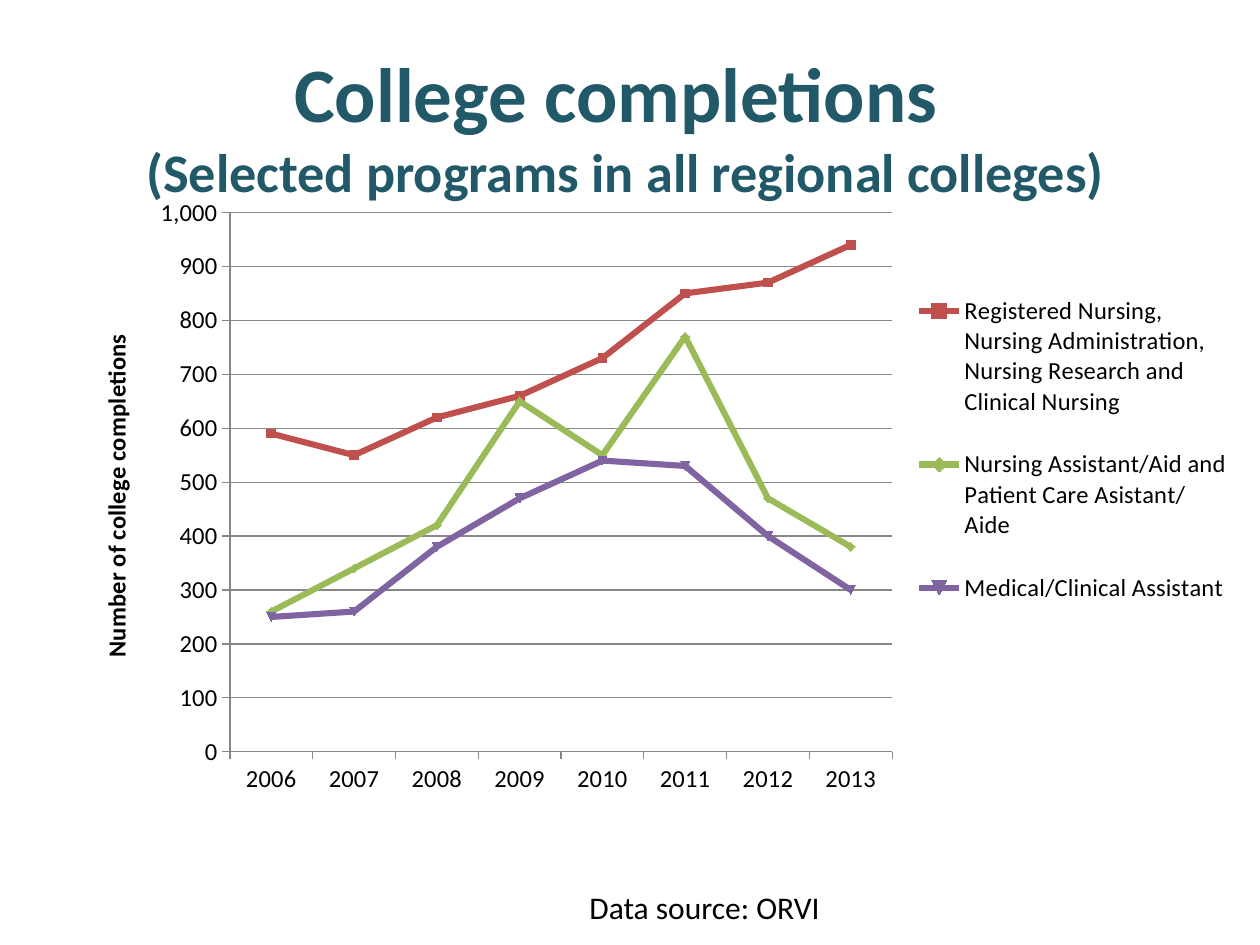
from dataclasses import dataclass

from lxml.etree import SubElement
from pptx import Presentation
from pptx.chart.data import CategoryChartData
from pptx.dml.color import RGBColor
from pptx.enum.chart import XL_CHART_TYPE as ChartType, XL_LEGEND_POSITION as LegendPosition
from pptx.enum.chart import XL_TICK_MARK as TickMark
from pptx.enum.text import MSO_ANCHOR as Anchor, PP_ALIGN as Align
from pptx.oxml.ns import qn
from pptx.util import Inches, Pt

FONT = "Calibri"
COLORS = {
    "title": "215968",
    "text": "000000",
    "grid": "878787",
    "nursing": "C0504D",
    "aide": "9BBB59",
    "medical": "8064A2",
}


@dataclass
class Program:
    name: str
    color: str
    completions: tuple[int, ...]


YEARS = [str(year) for year in range(2006, 2014)]
PROGRAMS = [
    Program("Registered Nursing, Nursing Administration, Nursing Research and Clinical Nursing",
            "nursing", (590, 550, 620, 660, 730, 850, 870, 940)),
    Program("Nursing Assistant/Aid and Patient Care Asistant/Aide",
            "aide", (260, 340, 420, 650, 550, 770, 470, 380)),
    Program("Medical/Clinical Assistant",
            "medical", (250, 260, 380, 470, 540, 530, 400, 300)),
]


def rgb(name: str) -> RGBColor:
    return RGBColor.from_string(COLORS[name])


def style_font(font, size: float, color: str = "text", bold: bool = False) -> None:
    font.name, font.size, font.bold = FONT, Pt(size), bold
    font.color.rgb = rgb(color)


def style_line(line, color: str, width: float) -> None:
    line.color.rgb = rgb(color)
    line.width = Pt(width)


def add_text_frame(slide, left: float, top: float, width: float, height: float):
    frame = slide.shapes.add_textbox(*map(Inches, (left, top, width, height))).text_frame
    frame.word_wrap = True
    return frame


def add_title(slide) -> None:
    frame = add_text_frame(slide, 0.46, 0.14, 9, 1.7)
    frame.vertical_anchor = Anchor.MIDDLE
    heading = frame.paragraphs[0]
    heading.alignment = Align.CENTER
    main = heading.add_run()
    main.text = "College completions "
    heading.add_line_break()
    subtitle = heading.add_run()
    subtitle.text = "(Selected programs in all regional colleges)"
    for run, size in ((main, 44), (subtitle, 31)):
        style_font(run.font, size, "title", True)


def add_data_source(slide) -> None:
    source = add_text_frame(slide, 4.58, 7, 4.64, 0.4).paragraphs[0]
    source.text = "Data source: ORVI"
    style_font(source.font, 18)


def set_layout(element, x: float, y: float, w: float, h: float, inner: bool = False) -> None:
    layout = element.find(qn("c:layout"))
    if layout is None:
        layout = SubElement(element, qn("c:layout"))
        element.remove(layout)
        element.insert(1 if element.tag == qn("c:legend") else 0, layout)
    manual = SubElement(layout, qn("c:manualLayout"))
    settings = [("layoutTarget", "inner")] if inner else []
    settings += [("xMode", "edge"), ("yMode", "edge"), ("x", x), ("y", y), ("w", w), ("h", h)]
    for tag, value in settings:
        SubElement(manual, qn(f"c:{tag}")).set("val", str(value))


def add_completions_chart(slide) -> None:
    data = CategoryChartData()
    data.categories = YEARS
    for program in PROGRAMS:
        data.add_series(program.name, program.completions)
    chart = slide.shapes.add_chart(
        ChartType.LINE_MARKERS, *map(Inches, (0.75, 1.5, 9.11, 4.92)), data).chart
    chart.has_title = False
    style_font(chart.font, 10)
    plot = chart.plots[0]
    plot.vary_by_categories = False
    for series, program in zip(plot.series, PROGRAMS):
        series.smooth = False
        style_line(series.format.line, program.color, 3.5)
        series.marker.size = 5
        series.marker.format.fill.solid()
        series.marker.format.fill.fore_color.rgb = rgb(program.color)

    for axis in (chart.category_axis, chart.value_axis):
        axis.major_tick_mark = TickMark.OUTSIDE
        axis.minor_tick_mark = TickMark.NONE
        style_line(axis.format.line, "grid", 0.75)
        style_font(axis.tick_labels.font, 14)
    counts = chart.value_axis
    counts.minimum_scale, counts.maximum_scale, counts.major_unit = 0, 1000, 100
    counts.tick_labels.number_format = r"#,##0;[Red]\ \(#,##0\)"
    counts.tick_labels.number_format_is_linked = False
    style_line(counts.major_gridlines.format.line, "grid", 0.75)
    axis_title = counts.axis_title.text_frame.paragraphs[0]
    axis_title.text = "Number of college completions"
    style_font(axis_title.font, 14, bold=True)

    chart.has_legend = True
    legend = chart.legend
    legend.position = LegendPosition.RIGHT
    legend.include_in_layout = False
    style_font(legend.font, 14)
    plot_area = chart.element.find(".//" + qn("c:plotArea"))
    set_layout(plot_area, 0.118, 0.038, 0.577, 0.87, inner=True)
    set_layout(chart.element.find(".//" + qn("c:legend")), 0.73, 0.12, 0.27, 0.6)


def main() -> None:
    """Build the college completions slide."""
    deck = Presentation()
    deck.slide_width, deck.slide_height = Inches(10), Inches(7.5)
    slide = deck.slides.add_slide(deck.slide_layouts[6])
    add_title(slide)
    add_data_source(slide)
    add_completions_chart(slide)
    deck.save("out.pptx")


if __name__ == "__main__":
    main()
